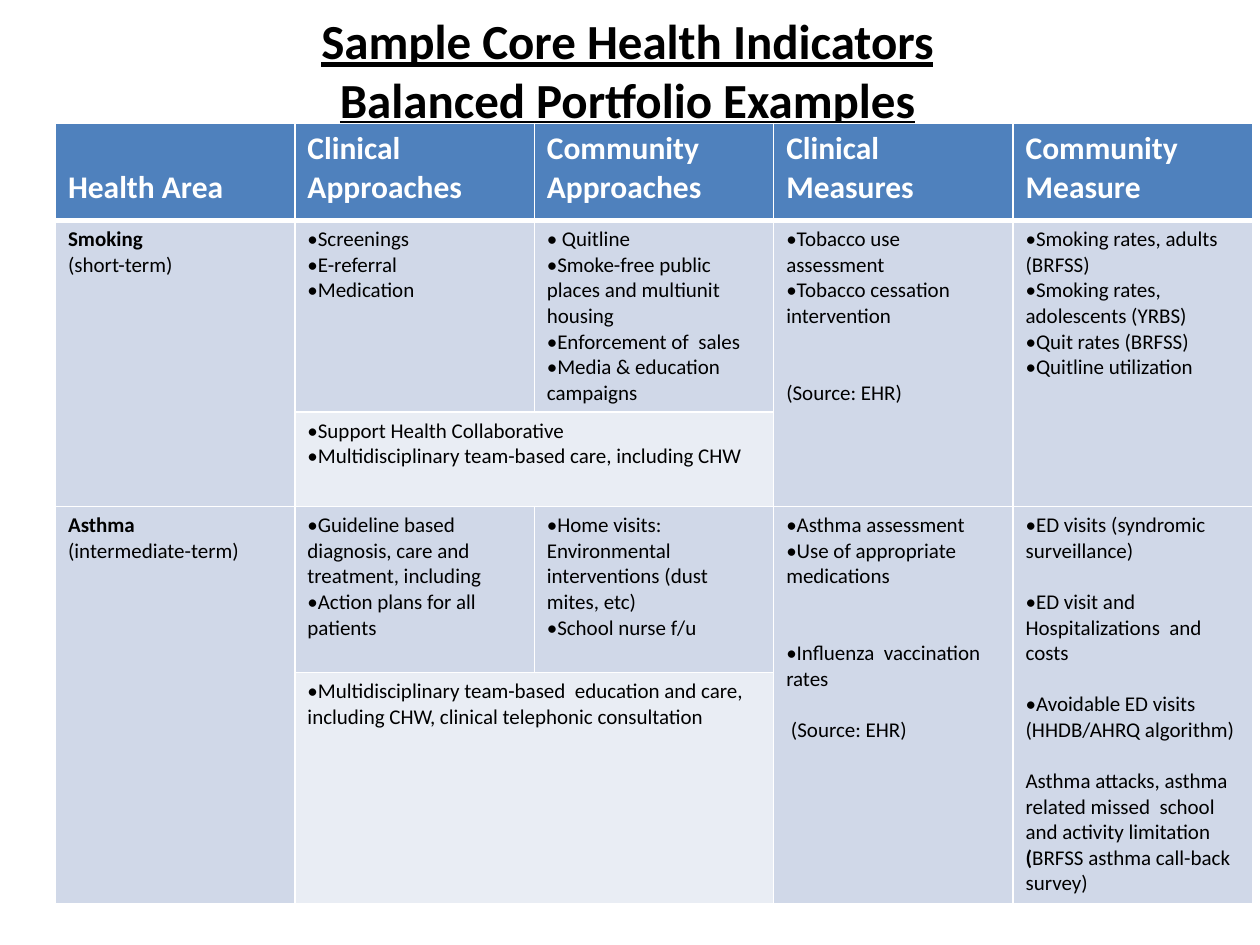
import dataclasses

import lxml.etree
import pptx
import pptx.dml.color
import pptx.enum.text
import pptx.oxml.ns
import pptx.util

RGBColor = pptx.dml.color.RGBColor
Inches = pptx.util.Inches
Pt = pptx.util.Pt

BLACK = RGBColor(0x00, 0x00, 0x00)
WHITE = RGBColor(0xFF, 0xFF, 0xFF)
HEADER_BLUE = RGBColor(0x4F, 0x81, 0xBD)
BAND_DARK = RGBColor(0xD0, 0xD8, 0xE8)
BAND_LIGHT = RGBColor(0xE9, 0xED, 0xF4)

FONT = "Calibri"
LINE_HEIGHT = 1.22  # line height as a multiple of the text size
BODY_SIZE = 12
HEADER_SIZE = 18
COLUMN_WIDTH = 1.9
ROW_HEIGHTS = (0.77, 1.52, 0.75, 1.32, 1.83)


@dataclasses.dataclass
class Line:
    """One paragraph: gap counts the empty lines above, bold is a bold part."""
    text: str
    bullet: bool = True
    gap: int = 0
    bold: str = ""


def plain(text, gap=0, bold=""):
    return Line(text, False, gap, bold)


HEADERS = ("Health Area", "Clinical\nApproaches", "Community\nApproaches",
           "Clinical\nMeasures", "Community\nMeasure")

# (row, column, rows spanned, columns spanned): paragraphs
BODY = {
    (1, 0, 2, 1): [plain("Smoking", bold="Smoking"), plain("(short-term)")],
    (1, 1, 1, 1): [Line("Screenings"), Line("E-referral"), Line("Medication")],
    (1, 2, 1, 1): [Line(" Quitline"),
                   Line("Smoke-free public places and multiunit housing"),
                   Line("Enforcement of  sales"),
                   Line("Media & education campaigns")],
    (1, 3, 2, 1): [Line("Tobacco use assessment"),
                   Line("Tobacco cessation intervention"),
                   plain("(Source: EHR)", gap=2)],
    (1, 4, 2, 1): [Line("Smoking rates, adults (BRFSS)"),
                   Line("Smoking rates, adolescents (YRBS)"),
                   Line("Quit rates (BRFSS)"),
                   Line("Quitline utilization")],
    (2, 1, 1, 2): [Line("Support Health Collaborative"),
                   Line("Multidisciplinary team-based care, including CHW")],
    (3, 0, 2, 1): [plain("Asthma", bold="Asthma"), plain("(intermediate-term)")],
    (3, 1, 1, 1): [Line("Guideline based diagnosis, care and treatment, including"),
                   Line("Action plans for all patients")],
    (3, 2, 1, 1): [Line("Home visits: Environmental interventions (dust mites, etc)"),
                   Line("School nurse f/u")],
    (3, 3, 2, 1): [Line("Asthma assessment"),
                   Line("Use of appropriate medications"),
                   Line("Influenza  vaccination rates", gap=2),
                   plain(" (Source: EHR)", gap=1)],
    (3, 4, 2, 1): [Line("ED visits (syndromic surveillance)"),
                   Line("ED visit and Hospitalizations  and costs", gap=1),
                   Line("Avoidable ED visits", gap=1),
                   plain("(HHDB/AHRQ algorithm)"),
                   plain("Asthma attacks, asthma related missed  school and activity "
                         "limitation (BRFSS asthma call-back survey)", gap=1, bold="(")],
    (4, 1, 1, 2): [Line("Multidisciplinary team-based  education and care, "
                        "including CHW, clinical telephonic consultation")],
}


def style_span(span, size, color, bold):
    span.font.name = FONT
    span.font.size = Pt(size)
    span.font.color.rgb = color
    span.font.bold = bold


def add_bullet(para):
    properties = para._p.get_or_add_pPr()
    properties.set("marL", "0")
    properties.set("indent", "0")
    font = lxml.etree.SubElement(properties, pptx.oxml.ns.qn("a:buFont"))
    font.set("typeface", FONT)
    bullet = lxml.etree.SubElement(properties, pptx.oxml.ns.qn("a:buChar"))
    bullet.set("char", "•")


def set_borders(cell, top=1, bottom=1):
    properties = cell._tc.get_or_add_tcPr()
    for side, width in (("L", 1), ("R", 1), ("T", top), ("B", bottom)):
        line = lxml.etree.SubElement(properties, pptx.oxml.ns.qn("a:ln" + side))
        line.set("w", str(Pt(width)))
        fill = lxml.etree.SubElement(line, pptx.oxml.ns.qn("a:solidFill"))
        color = lxml.etree.SubElement(fill, pptx.oxml.ns.qn("a:srgbClr"))
        color.set("val", str(WHITE))


def set_fill(cell, color):
    cell.fill.solid()
    cell.fill.fore_color.rgb = color


def write_line(para, line):
    """Write a body paragraph, splitting it around its bold part."""
    if line.gap:
        para.space_before = Pt(round(line.gap * BODY_SIZE * LINE_HEIGHT, 1))
    if line.bullet:
        add_bullet(para)
    parts = line.text.partition(line.bold) if line.bold else (line.text,)
    for part in filter(None, parts):
        span = para.add_run()
        span.text = part
        style_span(span, BODY_SIZE, BLACK, part == line.bold)


def write_header(cell, text):
    cell.text_frame.text = text
    for para in cell.text_frame.paragraphs:
        style_span(para.runs[0], HEADER_SIZE, WHITE, True)
    if "\n" not in text:  # a single line sits level with the second lines
        cell.margin_top = Inches(0.05) + Pt(HEADER_SIZE * LINE_HEIGHT)


def write_body(cell, lines):
    cell.margin_right = Inches(0.08)  # keeps the longest line whole
    frame = cell.text_frame
    for index, line in enumerate(lines):
        write_line(frame.add_paragraph() if index else frame.paragraphs[0], line)


def add_title(page, text):
    box = page.shapes.add_textbox(Inches(0.58), Inches(0.04), Inches(8.8), Inches(1.02))
    frame = box.text_frame
    frame.word_wrap = True
    frame.vertical_anchor = pptx.enum.text.MSO_ANCHOR.MIDDLE
    frame.text = text
    para = frame.paragraphs[0]
    para.alignment = pptx.enum.text.PP_ALIGN.CENTER
    for span in para.runs:
        style_span(span, 28, BLACK, True)
        span.font.underline = True


def add_indicator_table(page):
    shape = page.shapes.add_table(
        len(ROW_HEIGHTS), len(HEADERS), Inches(0.44), Inches(0.98),
        Inches(COLUMN_WIDTH * len(HEADERS)), Inches(sum(ROW_HEIGHTS)))
    table = shape.table
    for column in table.columns:
        column.width = Inches(COLUMN_WIDTH)
    for row, height in zip(table.rows, ROW_HEIGHTS):
        row.height = Inches(height)

    # Borders and fills, with a thick rule under the header
    for row in range(len(ROW_HEIGHTS)):
        for column in range(len(HEADERS)):
            cell = table.cell(row, column)
            set_borders(cell, top=3 if row == 1 else 1, bottom=3 if row == 0 else 1)
            shared = row in (2, 4) and column in (1, 2)
            set_fill(cell, HEADER_BLUE if row == 0 else BAND_LIGHT if shared else BAND_DARK)

    # Header and body text
    for column, text in enumerate(HEADERS):
        write_header(table.cell(0, column), text)
    for (row, column, rows, columns), lines in BODY.items():
        cell = table.cell(row, column)
        if rows * columns > 1:
            cell.merge(table.cell(row + rows - 1, column + columns - 1))
        write_body(cell, lines)


def main():
    deck = pptx.Presentation()
    deck.slide_width = Inches(10)
    deck.slide_height = Inches(7.5)
    page = deck.slides.add_slide(deck.slide_layouts[6])
    add_title(page, "Sample Core Health Indicators\vBalanced Portfolio Examples")
    add_indicator_table(page)
    deck.save("out.pptx")


if __name__ == "__main__":
    main()
